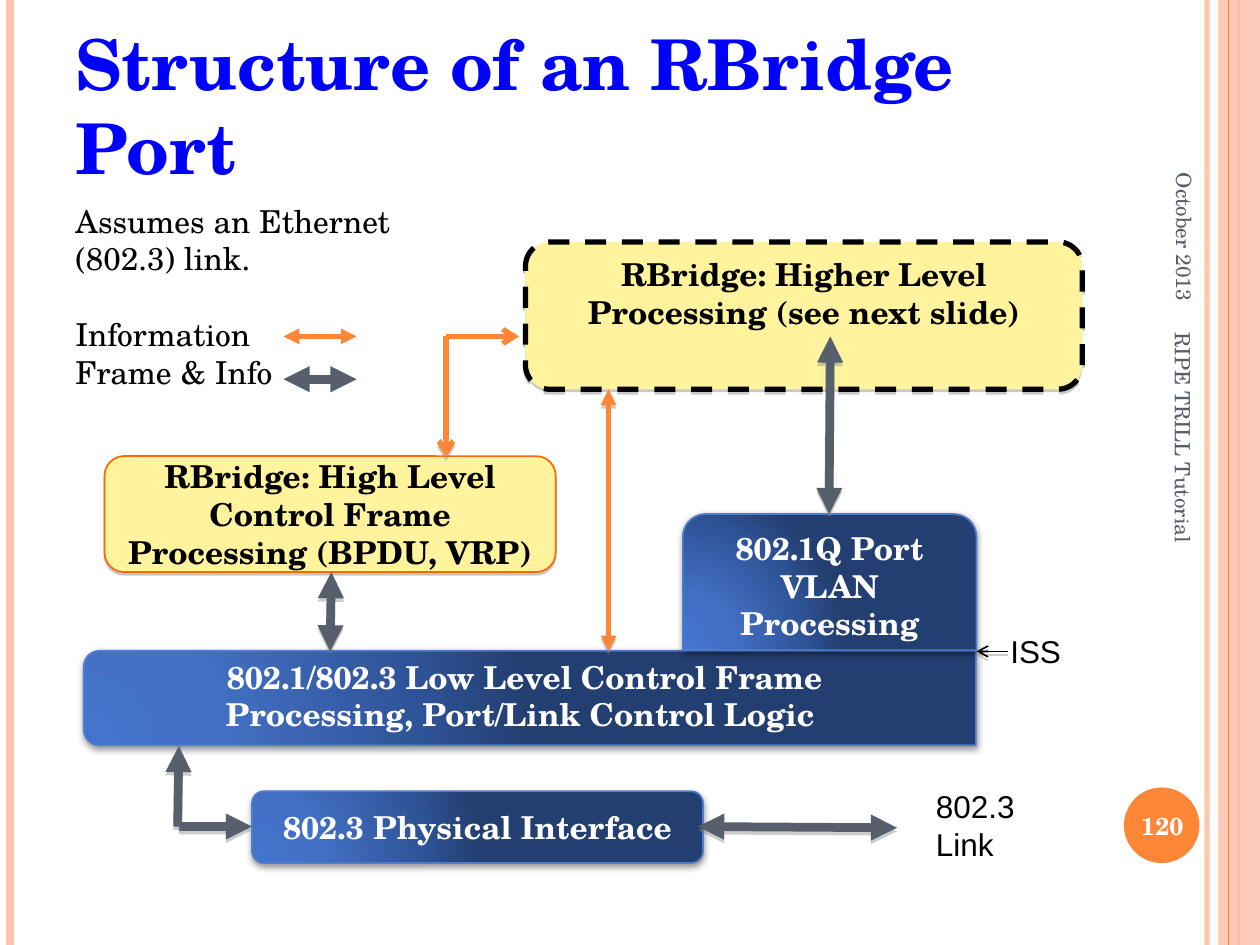
from pptx import Presentation
from pptx.dml.color import RGBColor
from pptx.enum.dml import MSO_LINE
from pptx.enum.shapes import MSO_CONNECTOR, MSO_SHAPE
from pptx.enum.text import MSO_ANCHOR, MSO_AUTO_SIZE, PP_ALIGN
from pptx.oxml import parse_xml
from pptx.oxml.ns import nsdecls, qn
from pptx.util import Inches, Pt

SERIF, SANS = "TeX Gyre Schola", "Arial"
ORANGE, PEACH, SLATE, YELLOW = "FE8637", "FEC3AE", "575F6D", "FFF39D"
BLACK, WHITE, BLUE, BLUE_EDGE = "000000", "FFFFFF", "0000FF", "4F7CCF"
GRADIENT = [(0, "4574CC"), (30, "4370C5"), (75, "2F5397"), (100, "233E70")]
GRAY_SHADOW, DARK_SHADOW = ("808080", 42, 0, 1.6), ("000000", 42, 4, 1.6)
LINE_SHADOW = ("808080", 40, 0, 2)

STRIPES = [(9.58, PEACH, 3, 93), (0.08, PEACH, 4.5, 100), (9.83, ORANGE, 1.5, 100)]
INNER_STRIPE = (9.75, ORANGE, 0.75, 100)

TITLE = "Structure of an RBridge Port"
LEGEND = ["Assumes an Ethernet (802.3) link.", "Information", "Frame & Info"]
LOW_LEVEL = "802.1/802.3 Low Level Control Frame Processing, Port/Link Control Logic "

BLUE_BOXES = [
    (MSO_SHAPE.ROUNDED_RECTANGLE, (2, 6.28, 3.58, 0.57), 0, "802.3 Physical Interface"),
    (MSO_SHAPE.ROUND_2_SAME_RECTANGLE, (3.83, 2, 0.75, 7.08), 270, ""),
    (MSO_SHAPE.ROUND_2_SAME_RECTANGLE, (5.42, 4.08, 2.33, 1.08), 0, "802.1Q Port VLAN Processing"),
]
YELLOW_BOXES = [
    ((0.83, 3.62, 3.58, 0.92), "RBridge: High Level Control Frame Processing (BPDU, VRP)",
     "FF6903", 1, None, MSO_ANCHOR.MIDDLE),
    ((4.17, 1.92, 4.42, 1.17), "RBridge: Higher Level Processing (see next slide)",
     BLACK, 3, MSO_LINE.DASH, MSO_ANCHOR.TOP),
]
BOTH, END, OPEN = ("triangle", "triangle"), (None, "triangle"), (None, "arrow")
ARROWS = [
    ((2.25, 2.67), (2.83, 2.67), ORANGE, 3, BOTH, None),
    ((2.25, 3.01), (2.83, 3.01), SLATE, 5, BOTH, None),
    ((5.54, 6.56), (7.12, 6.57), SLATE, 5, BOTH, LINE_SHADOW),
    ((1.42, 6.56), (2, 6.56), SLATE, 5, END, LINE_SHADOW),
    ((1.41, 6.56), (1.42, 5.92), SLATE, 5, END, LINE_SHADOW),
    ((2.62, 5.17), (2.63, 4.54), SLATE, 5, BOTH, LINE_SHADOW),
    ((8, 5.17), (7.75, 5.17), BLACK, 1, OPEN, LINE_SHADOW),
    ((6.58, 4.08), (6.59, 2.67), SLATE, 5, BOTH, LINE_SHADOW),
    ((4.83, 3.09), (4.83, 5.17), ORANGE, 3, BOTH, LINE_SHADOW),
    ((3.54, 2.67), (4.12, 2.67), ORANGE, 3, OPEN, None),
    ((3.54, 2.67), (3.54, 3.63), ORANGE, 3, OPEN, LINE_SHADOW),
]
SMALL = {"size": 12, "color": SLATE, "anchor": MSO_ANCHOR.MIDDLE}
BOLD = {"color": WHITE, "bold": True, "align": PP_ALIGN.CENTER}
LABELS = [
    ((8.3, 1.18, 2.2, 0.42), 90, "October 2013", {**SMALL, "align": PP_ALIGN.RIGHT}),
    ((7.64, 4.09, 3.5, 0.4), 90, "RIPE TRILL Tutorial", SMALL),
    ((8.89, 6.27, 0.67, 0.57), 0, "120", {**BOLD, "size": 14, "anchor": MSO_ANCHOR.MIDDLE}),
    ((7.33, 6.2, 1, 0.71), 0, "802.3 Link", {"font": SANS}),
    ((7.92, 4.97, 0.67, 0.4), 0, "ISS", {"font": SANS}),
    ((1, 5.17, 6.33, 0.71), 0, LOW_LEVEL, BOLD),
]


def rgb(color):
    return RGBColor.from_string(color)


def write(shape, text, size=18, font=SERIF, color=BLACK, bold=False,
          align=PP_ALIGN.LEFT, anchor=MSO_ANCHOR.TOP):
    frame = shape.text_frame
    frame.word_wrap = True
    frame.auto_size = MSO_AUTO_SIZE.NONE
    frame.vertical_anchor = anchor
    frame.text = text
    for paragraph in frame.paragraphs:
        paragraph.alignment = align
        for run in paragraph.runs:
            run.font.size, run.font.name, run.font.bold = Pt(size), font, bold
            run.font.color.rgb = rgb(color)
    return frame


def set_alpha(fill_format, percent):
    color = fill_format._xPr.find(".//" + qn("a:srgbClr"))
    color.append(parse_xml(f'<a:alpha {nsdecls("a")} val="{percent * 1000}"/>'))


def add_effects(properties, shadow):
    inner = ""
    if shadow:
        color, alpha, blur, distance = shadow
        inner = (f'<a:outerShdw blurRad="{Pt(blur)}" dist="{Pt(distance)}" dir="5400000" '
                 f'rotWithShape="0"><a:srgbClr val="{color}">'
                 f'<a:alpha val="{alpha * 1000}"/></a:srgbClr></a:outerShdw>')
    properties.append(parse_xml(f'<a:effectLst {nsdecls("a")}>{inner}</a:effectLst>'))


def add_line(slide, start, end, color, width, heads=(None, None), shadow=None, alpha=100):
    connector = slide.shapes.add_connector(
        MSO_CONNECTOR.STRAIGHT, *(Inches(value) for value in (*start, *end)))
    connector.line.color.rgb = rgb(color)
    connector.line.width = Pt(width)
    if alpha < 100:
        set_alpha(connector.line.fill, alpha)
    for tag, kind in zip(("headEnd", "tailEnd"), heads):
        if kind:
            connector.line._get_or_add_ln().append(
                parse_xml(f'<a:{tag} {nsdecls("a")} type="{kind}"/>'))
    add_effects(connector._element.spPr, shadow)


def add_box(slide, preset, place, fill=None, line=None, width=1, dash=None,
            shadow=None, rotation=0):
    shape = slide.shapes.add_shape(preset, *map(Inches, place))
    shape.rotation = rotation
    if fill:
        shape.fill.solid()
        shape.fill.fore_color.rgb = rgb(fill)
    else:
        stops = "".join(f'<a:gs pos="{position * 1000}"><a:srgbClr val="{color}"/></a:gs>'
                        for position, color in GRADIENT)
        shape._element.spPr.append(parse_xml(
            f'<a:gradFill {nsdecls("a")} rotWithShape="1"><a:gsLst>{stops}</a:gsLst>'
            '<a:path path="circle"><a:fillToRect l="5000" t="100000" r="120000" b="10000"/>'
            '</a:path></a:gradFill>'))
    if line:
        shape.line.color.rgb = rgb(line)
        shape.line.width = Pt(width)
        if dash:
            shape.line.dash_style = dash
    else:
        shape.line.fill.background()
    add_effects(shape._element.spPr, shadow)
    return shape


def add_label(slide, place, rotation, text, style):
    label = slide.shapes.add_textbox(*map(Inches, place))
    label.rotation = rotation
    return write(label, text, **style)


def add_stripe(slide, x, color, width, alpha):
    add_line(slide, (x, 0), (x, 7.5), color, width, alpha=alpha)


def main():
    presentation = Presentation()
    presentation.slide_width, presentation.slide_height = Inches(10), Inches(7.5)
    slide = presentation.slides.add_slide(presentation.slide_layouts[5])

    for stripe in STRIPES:
        add_stripe(slide, *stripe)
    band = add_box(slide, MSO_SHAPE.RECTANGLE, (9.67, 0, 0.33, 7.5), PEACH)
    set_alpha(band.fill, 87)
    add_stripe(slide, *INNER_STRIPE)
    add_box(slide, MSO_SHAPE.OVAL, (8.92, 6.25, 0.6, 0.6), ORANGE)

    title = slide.shapes.title
    title.left, title.top, title.width, title.height = map(Inches, (0.5, 0.3, 8.17, 1.25))
    write(title, TITLE, size=40, color=BLUE, bold=True, anchor=MSO_ANCHOR.BOTTOM)
    legend = add_label(slide, (0.5, 1.55, 3.33, 1.62), 0, "\n".join(LEGEND), {})
    legend.paragraphs[1].space_before = Pt(21.6)

    for preset, place, rotation, text in BLUE_BOXES:
        box = add_box(slide, preset, place, line=BLUE_EDGE, shadow=DARK_SHADOW, rotation=rotation)
        if text:
            write(box, text, anchor=MSO_ANCHOR.MIDDLE, **BOLD)
    for place, text, line, width, dash, anchor in YELLOW_BOXES:
        box = add_box(slide, MSO_SHAPE.ROUNDED_RECTANGLE, place, YELLOW, line, width, dash,
                      GRAY_SHADOW)
        write(box, text, anchor=anchor, **{**BOLD, "color": BLACK})
    for arrow in ARROWS:
        add_line(slide, *arrow)
    for label in LABELS:
        add_label(slide, *label)

    presentation.save("out.pptx")


if __name__ == "__main__":
    main()
